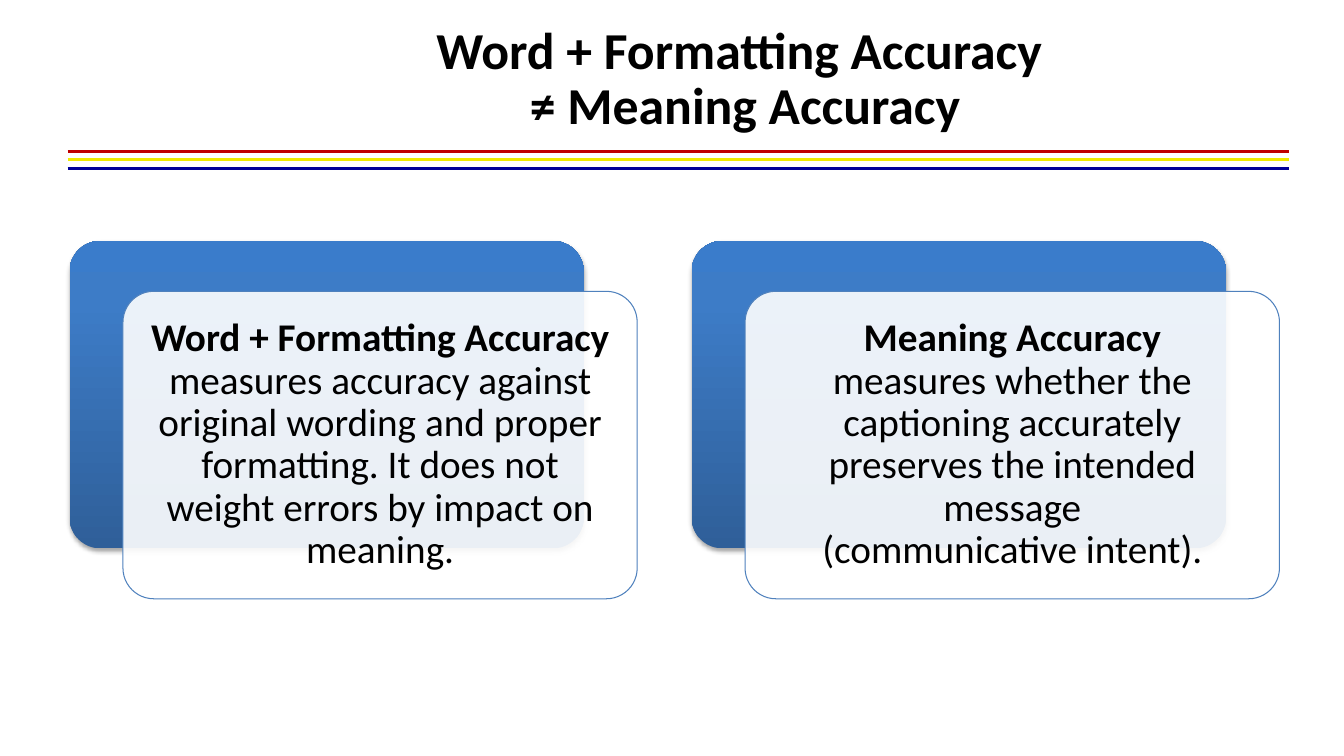
from copy import deepcopy
from dataclasses import dataclass

from lxml.etree import SubElement
from pptx import Presentation
from pptx.dml.color import RGBColor
from pptx.enum.shapes import MSO_CONNECTOR, MSO_SHAPE
from pptx.enum.text import MSO_ANCHOR, PP_ALIGN
from pptx.oxml.ns import qn
from pptx.shapes.autoshape import Shape
from pptx.slide import Slide
from pptx.util import Inches, Pt


@dataclass(frozen=True)
class Theme:
    font: str = "Calibri"
    title_size: float = 37
    card_size: float = 28
    rule_width: float = 2
    outline_width: float = 0.75
    text: str = "000000"
    panel: str = "FFFFFF"
    outline: str = "4F81BD"
    shadow: str = "000000"
    gradient: tuple[tuple[float, str], ...] = (
        (0, "2F5F99"), (0.8, "3D7CC7"), (1, "3A7CCB"))


@dataclass(frozen=True)
class Rule:
    top: float
    color: str


@dataclass(frozen=True)
class Card:
    left: float
    width: float
    heading: str
    body: str


THEME = Theme()
TITLE = "Word + Formatting Accuracy \v≠ Meaning Accuracy"
RULES = [Rule(1.5, "C00000"), Rule(1.58, "F0EA00"), Rule(1.67, "000099")]
CARDS = [
    Card(0.69, 5.1, "Word + Formatting Accuracy",
         "measures accuracy against original wording and proper formatting. "
         "It does not weight errors by impact on meaning."),
    Card(6.86, 5.3, "Meaning Accuracy",
         "measures whether the captioning accurately preserves the intended "
         "message\v(communicative intent)."),
]
RULE_LEFT, RULE_RIGHT = 0.67, 12.78
CARD_TOP, CARD_HEIGHT = 2.39, 3.05
PANEL_SHIFT_X, PANEL_SHIFT_Y = 0.53, 0.5
TEXT_GAP = 0.09
TEXT_INSET = 0.12


def color(value: str) -> RGBColor:
    return RGBColor.from_string(value)


def add_rule(slide: Slide, rule: Rule) -> None:
    stripe = slide.shapes.add_connector(
        MSO_CONNECTOR.STRAIGHT, Inches(RULE_LEFT), Inches(rule.top),
        Inches(RULE_RIGHT), Inches(rule.top))
    stripe.line.color.rgb = color(rule.color)
    stripe.line.width = Pt(THEME.rule_width)
    SubElement(stripe._element.spPr, qn("a:effectLst"))


def add_centred_text(slide: Slide, left: float, top: float, width: float,
                     height: float, text: str, size: float) -> Shape:
    box = slide.shapes.add_textbox(
        Inches(left), Inches(top), Inches(width), Inches(height))
    frame = box.text_frame
    frame.word_wrap = True
    frame.vertical_anchor = MSO_ANCHOR.MIDDLE
    frame.text = text
    paragraph = frame.paragraphs[0]
    paragraph.alignment = PP_ALIGN.CENTER
    paragraph.line_spacing = 0.9
    for run in paragraph.runs:
        run.font.name = THEME.font
        run.font.size = Pt(size)
        run.font.color.rgb = color(THEME.text)
    return box


def add_rounded(slide: Slide, left: float, top: float, width: float) -> Shape:
    rounded = slide.shapes.add_shape(
        MSO_SHAPE.ROUNDED_RECTANGLE, Inches(left), Inches(top),
        Inches(width), Inches(CARD_HEIGHT))
    rounded.adjustments[0] = 0.1
    rounded.shadow.inherit = False
    return rounded


def apply_gradient(shape: Shape) -> None:
    shape.fill.gradient()
    stop_list = shape._element.spPr.find(f".//{qn('a:gsLst')}")
    stop_list.append(deepcopy(stop_list[0]))
    for stop, (position, value) in zip(shape.fill.gradient_stops, THEME.gradient):
        stop.position = position
        stop.color.rgb = color(value)
    shape.fill.gradient_angle = 90


def apply_shadow(shape: Shape) -> None:
    effects = shape._element.spPr.find(qn("a:effectLst"))
    shadow = SubElement(effects, qn("a:outerShdw"), blurRad=str(Pt(3.1)),
                        dist=str(Pt(1.8)), dir="5400000", rotWithShape="0")
    shade = SubElement(shadow, qn("a:srgbClr"), val=THEME.shadow)
    SubElement(shade, qn("a:alpha"), val="35000")


def add_card(slide: Slide, card: Card) -> None:
    backing = add_rounded(slide, card.left, CARD_TOP, card.width)
    apply_gradient(backing)
    backing.line.fill.background()
    apply_shadow(backing)

    panel_left = card.left + PANEL_SHIFT_X
    panel_top = CARD_TOP + PANEL_SHIFT_Y
    panel = add_rounded(slide, panel_left, panel_top, card.width)
    panel.fill.solid()
    panel.fill.fore_color.rgb = color(THEME.panel)
    panel_color = panel._element.spPr.find(f"{qn('a:solidFill')}/{qn('a:srgbClr')}")
    SubElement(panel_color, qn("a:alpha"), val="90000")
    panel.line.color.rgb = color(THEME.outline)
    panel.line.width = Pt(THEME.outline_width)

    message = add_centred_text(
        slide, panel_left + TEXT_GAP, panel_top + TEXT_GAP,
        card.width - 2 * TEXT_GAP, CARD_HEIGHT - 2 * TEXT_GAP,
        f"{card.heading}\v{card.body}", THEME.card_size)
    frame = message.text_frame
    frame.margin_left = frame.margin_right = Inches(TEXT_INSET)
    frame.margin_top = frame.margin_bottom = Inches(TEXT_INSET)
    frame.paragraphs[0].runs[0].font.bold = True


def main() -> None:
    presentation = Presentation()
    presentation.slide_width = Inches(13.33)
    presentation.slide_height = Inches(7.5)
    slide = presentation.slides.add_slide(presentation.slide_layouts[6])
    for rule in RULES:
        add_rule(slide, rule)
    title = add_centred_text(slide, 2, 0.17, 10.78, 1.25, TITLE, THEME.title_size)
    for run in title.text_frame.paragraphs[0].runs:
        run.font.bold = True
    for card in CARDS:
        add_card(slide, card)
    presentation.save("out.pptx")


if __name__ == "__main__":
    main()
